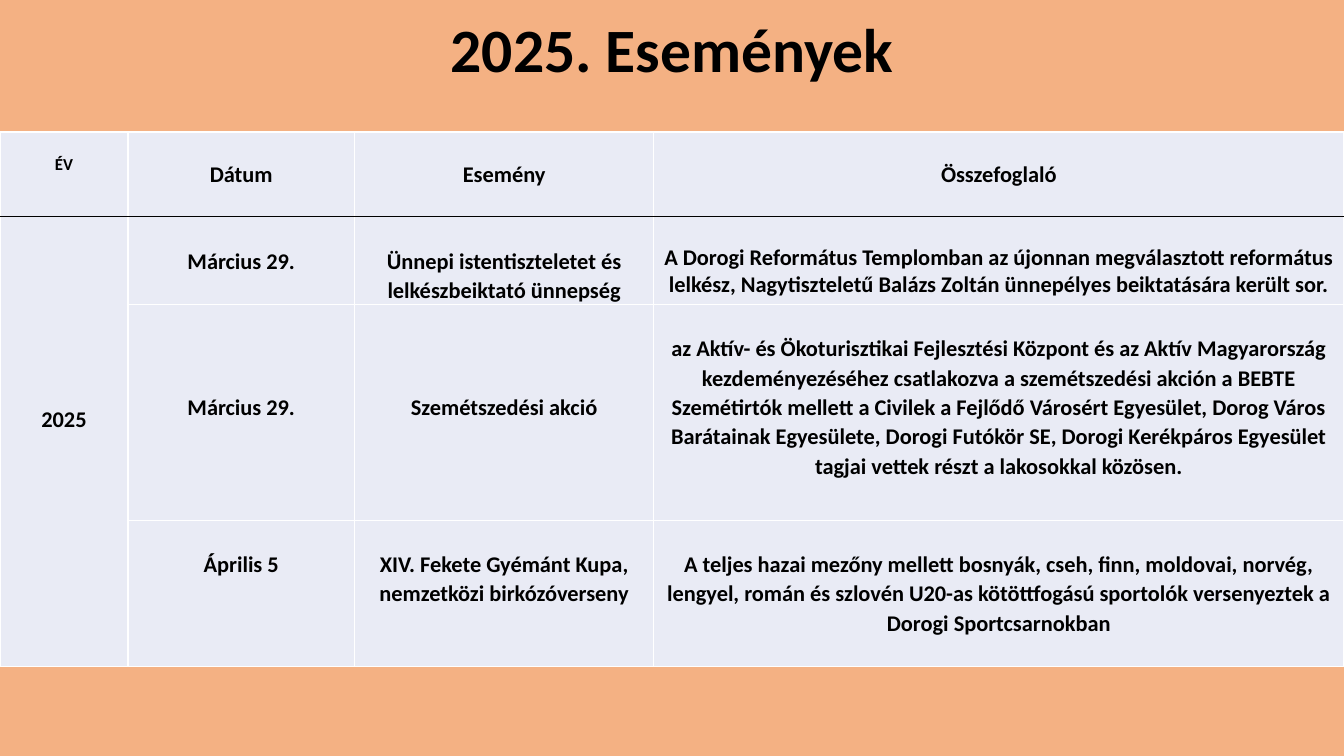
from lxml.etree import SubElement
from pptx import Presentation
from pptx.dml.color import RGBColor
from pptx.enum.text import MSO_ANCHOR, PP_ALIGN
from pptx.oxml.ns import qn
from pptx.util import Inches, Pt

COLORS = {"background": "F4B183", "cell": "E9EBF5", "text": "000000", "grid": "FFFFFF", "rule": "000000"}
FONT = "Calibri"
LINE = 0.29
COLUMN_WIDTHS = [1.27, 2.25, 2.97, 6.85]
ROW_HEIGHTS = [0.84, 0.87, 2.14, 1.45]
HEADINGS = ["ÉV", "Dátum", "Esemény", "Összefoglaló"]
YEAR = "2025"
EVENTS = [
    ("Március 29.", "Ünnepi istentiszteletet és lelkészbeiktató ünnepség",
     "A Dorogi Református Templomban az újonnan megválasztott református lelkész, "
     "Nagytiszteletű Balázs Zoltán ünnepélyes beiktatására került sor."),
    ("Március 29.", "Szemétszedési akció",
     "az Aktív- és Ökoturisztikai Fejlesztési Központ és az Aktív Magyarország "
     "kezdeményezéséhez csatlakozva a szemétszedési akción a BEBTE Szemétirtók mellett "
     "a Civilek a Fejlődő Városért Egyesület, Dorog Város Barátainak Egyesülete, "
     "Dorogi Futókör SE, Dorogi Kerékpáros Egyesület tagjai vettek részt a lakosokkal közösen."),
    ("Április 5", "XIV. Fekete Gyémánt Kupa, nemzetközi birkózóverseny",
     "A teljes hazai mezőny mellett bosnyák, cseh, finn, moldovai, norvég, lengyel, román és "
     "szlovén U20-as kötöttfogású sportolók versenyeztek a Dorogi Sportcsarnokban"),
]


def write(frame, wording, size, spacing=1.0):
    """Set one centred bold paragraph in the given text frame."""
    frame.text = wording
    paragraph = frame.paragraphs[0]
    paragraph.alignment = PP_ALIGN.CENTER
    paragraph.line_spacing = spacing
    for run in paragraph.runs:
        run.font.name = FONT
        run.font.size = Pt(size)
        run.font.bold = True
        run.font.color.rgb = RGBColor.from_string(COLORS["text"])


def outline(cell, top, bottom):
    """Fill a cell and draw its four one-point borders."""
    cell.fill.solid()
    cell.fill.fore_color.rgb = RGBColor.from_string(COLORS["cell"])
    properties = cell._tc.get_or_add_tcPr()
    sides = [("a:lnL", "grid"), ("a:lnR", "grid"), ("a:lnT", top), ("a:lnB", bottom)]
    for position, (side, color) in enumerate(sides):
        border = SubElement(properties, qn(side), w=str(Pt(1)))
        fill = SubElement(border, qn("a:solidFill"))
        SubElement(fill, qn("a:srgbClr"), val=COLORS[color])
        properties.insert(position, border)


def place(cell, wording, size=16, spacing=1.0, side=0.07, top=0.0, bottom=0.0, anchor=MSO_ANCHOR.TOP):
    """Write a cell's wording and position it through the cell margins."""
    write(cell.text_frame, wording, size, spacing)
    cell.margin_left = cell.margin_right = Inches(side)
    cell.margin_top, cell.margin_bottom = Inches(top), Inches(bottom)
    cell.vertical_anchor = anchor


def add_title(slide, left, top, width, height):
    """Place the slide title in its placeholder."""
    title = slide.shapes.title
    title.left, title.top, title.width, title.height = map(Inches, (left, top, width, height))
    write(title.text_frame, "2025. Események", 44, 0.9)
    title.text_frame.vertical_anchor = MSO_ANCHOR.MIDDLE


def add_events(slide, left, top, width, height):
    """Build the events table within the given box."""
    frame = slide.shapes.add_table(len(ROW_HEIGHTS), len(COLUMN_WIDTHS), *map(Inches, (left, top, width, height)))
    events = frame.table
    events.horz_banding = False
    for column, share in zip(events.columns, COLUMN_WIDTHS):
        column.width = Inches(width * share / sum(COLUMN_WIDTHS))
    for row, share in zip(events.rows, ROW_HEIGHTS):
        row.height = Inches(height * share / sum(ROW_HEIGHTS))
    for index, row in enumerate(events.rows):
        for cell in row.cells:
            outline(cell, "rule" if index == 1 else "grid", "rule" if index == 0 else "grid")

    for column, heading in enumerate(HEADINGS):
        is_year = column == 0
        place(events.cell(0, column), heading, size=12 if is_year else 16, side=0.04,
              bottom=0.2 if is_year else 0, anchor=MSO_ANCHOR.MIDDLE)

    events.cell(1, 0).merge(events.cell(3, 0))
    place(events.cell(1, 0), YEAR, top=1.88)
    for row, (date, event, summary) in enumerate(EVENTS, start=1):
        lead = 3 * LINE if row == 2 else LINE
        place(events.cell(row, 1), date, spacing=1.07, top=lead)
        place(events.cell(row, 2), event, spacing=1.07, top=lead)
        if row == 1:
            place(events.cell(row, 3), summary, top=0.27)
        else:
            place(events.cell(row, 3), summary, spacing=1.07, top=LINE)


def main():
    """Build and save the events slide."""
    deck = Presentation()
    deck.slide_width, deck.slide_height = Inches(13.33), Inches(7.5)
    slide = deck.slides.add_slide(deck.slide_layouts[5])
    slide.background.fill.solid()
    slide.background.fill.fore_color.rgb = RGBColor.from_string(COLORS["background"])
    add_title(slide, 0.92, -0.2, 11.5, 1.45)
    add_events(slide, 0, 1.31, 13.33, sum(ROW_HEIGHTS))
    deck.save("out.pptx")


if __name__ == "__main__":
    main()
